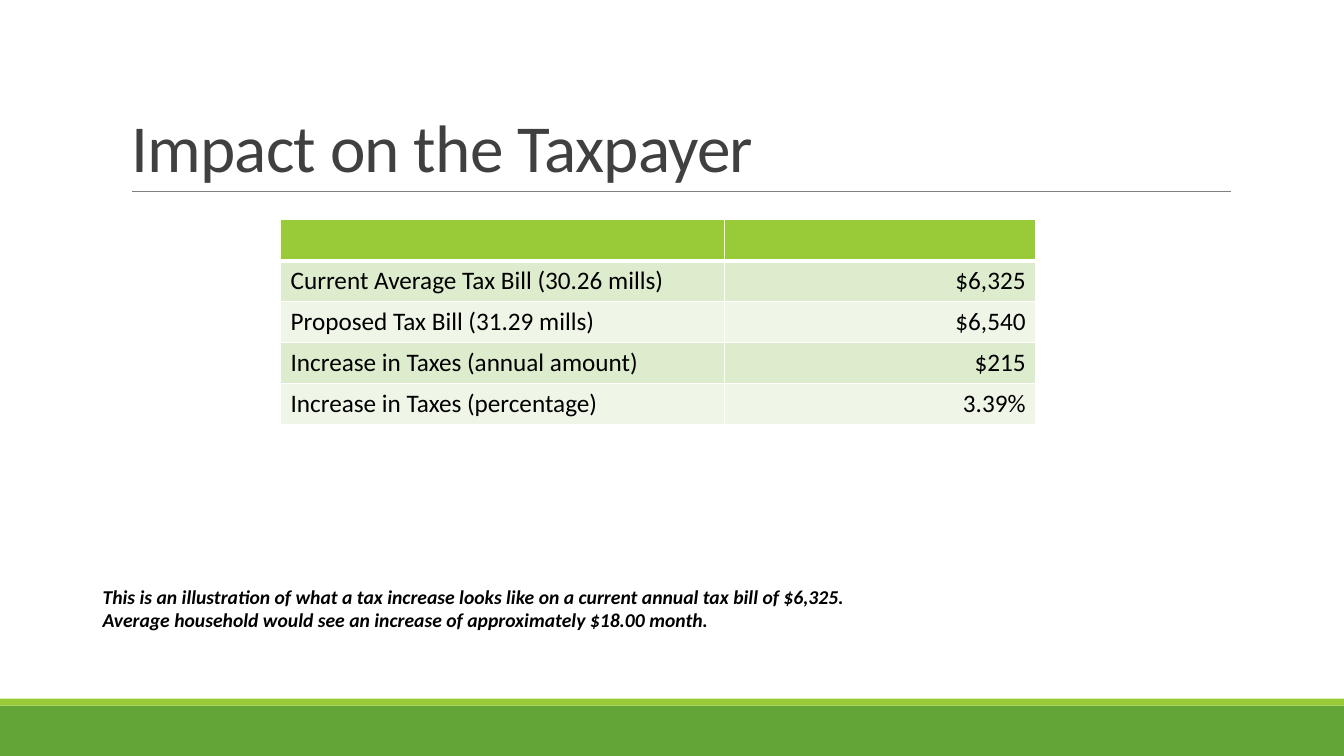
from dataclasses import dataclass

from lxml import etree
from pptx import Presentation
from pptx.dml.color import RGBColor
from pptx.enum import shapes, text
from pptx.oxml import ns
from pptx.util import Pt


@dataclass(frozen=True)
class Theme:
    font: str = "Calibri"
    green: str = "63A537"
    lime: str = "99CB38"
    tint: str = "DEECCE"
    pale: str = "EFF6E8"
    white: str = "FFFFFF"
    black: str = "000000"
    gray: str = "808080"
    dark: str = "404040"
    title: int = 48
    cell: int = 18
    note: int = 14


THEME = Theme()
ROWS = [
    ("", ""),
    ("Current Average Tax Bill (30.26 mills)", "$6,325"),
    ("Proposed Tax Bill (31.29 mills)", "$6,540"),
    ("Increase in Taxes (annual amount)", "$215"),
    ("Increase in Taxes (percentage)", "3.39%"),
]
NOTE = (
    "This is an illustration of what a tax increase looks like on a current annual tax bill of $6,325.\n"
    "Average household would see an increase of approximately $18.00 month."
)


def rgb(code):
    return RGBColor.from_string(code)


def style(frame, size, color, bold=False, italic=False):
    for para in frame.paragraphs:
        for run in para.runs:
            font = run.font
            font.name, font.size = THEME.font, Pt(size)
            font.bold, font.italic = bold, italic
            font.color.rgb = rgb(color)


def add_band(slide, top, width, height, color):
    band = slide.shapes.add_shape(
        shapes.MSO_SHAPE.RECTANGLE, 0, Pt(top), width, Pt(height))
    band.shadow.inherit = False
    band.fill.solid()
    band.fill.fore_color.rgb = rgb(color)
    band.line.fill.background()


def add_rule(slide, left, right, top):
    rule = slide.shapes.add_connector(
        shapes.MSO_CONNECTOR.STRAIGHT, Pt(left), Pt(top), Pt(right), Pt(top))
    rule.line.color.rgb = rgb(THEME.gray)
    rule.line.width = Pt(0.5)
    etree.SubElement(rule._element.spPr, ns.qn("a:effectLst"))


def set_title(slide, words):
    title = slide.shapes.title
    title.left, title.top = Pt(86.4), Pt(22.6)
    title.width, title.height = Pt(792), Pt(114.2)
    frame = title.text_frame
    frame.text = words
    frame.auto_size = text.MSO_AUTO_SIZE.NONE
    frame.vertical_anchor = text.MSO_ANCHOR.BOTTOM
    para = frame.paragraphs[0]
    para.alignment = text.PP_ALIGN.LEFT
    para.line_spacing = 0.85
    style(frame, THEME.title, THEME.dark)
    para.runs[0].font._element.set("spc", "-50")


def set_edge(cell, side, width):
    edge = etree.SubElement(
        cell._tc.get_or_add_tcPr(), ns.qn(f"a:ln{side}"), w=str(Pt(width)))
    fill = etree.SubElement(edge, ns.qn("a:solidFill"))
    etree.SubElement(fill, ns.qn("a:srgbClr"), val=THEME.white)


def add_grid(slide, rows):
    widths = (317.2, 222.2)
    height = 29.2
    table = slide.shapes.add_table(
        len(rows), len(widths), Pt(200.4), Pt(157),
        Pt(sum(widths)), Pt(height * len(rows))).table
    for col, width in zip(table.columns, widths):
        col.width = Pt(width)
    for r, words in enumerate(rows):
        table.rows[r].height = Pt(height)
        color = THEME.lime if r == 0 else (THEME.pale, THEME.tint)[r % 2]
        for c, word in enumerate(words):
            cell = table.cell(r, c)
            for side in "LRTB":
                heavy = (r, side) in ((0, "B"), (1, "T"))
                set_edge(cell, side, 3 if heavy else 1)
            cell.fill.solid()
            cell.fill.fore_color.rgb = rgb(color)
            cell.text_frame.text = word
            if c == 1:
                cell.text_frame.paragraphs[0].alignment = text.PP_ALIGN.RIGHT
            style(cell.text_frame, THEME.cell, THEME.black)


def add_note(slide, words):
    box = slide.shapes.add_textbox(Pt(66.2), Pt(414), Pt(598.3), Pt(41.2))
    frame = box.text_frame
    frame.word_wrap = True
    frame.auto_size = text.MSO_AUTO_SIZE.SHAPE_TO_FIT_TEXT
    frame.text = words
    style(frame, THEME.note, THEME.black, bold=True, italic=True)


def main():
    deck = Presentation()
    deck.slide_width, deck.slide_height = Pt(960), Pt(540)
    slide = deck.slides.add_slide(deck.slide_layouts[5])
    add_band(slide, 504, deck.slide_width, 36, THEME.green)
    add_band(slide, 499, deck.slide_width, 5, THEME.lime)
    add_rule(slide, 94.3, 879, 136.6)
    set_title(slide, "Impact on the Taxpayer")
    add_grid(slide, ROWS)
    add_note(slide, NOTE)
    deck.save("out.pptx")


if __name__ == "__main__":
    main()
